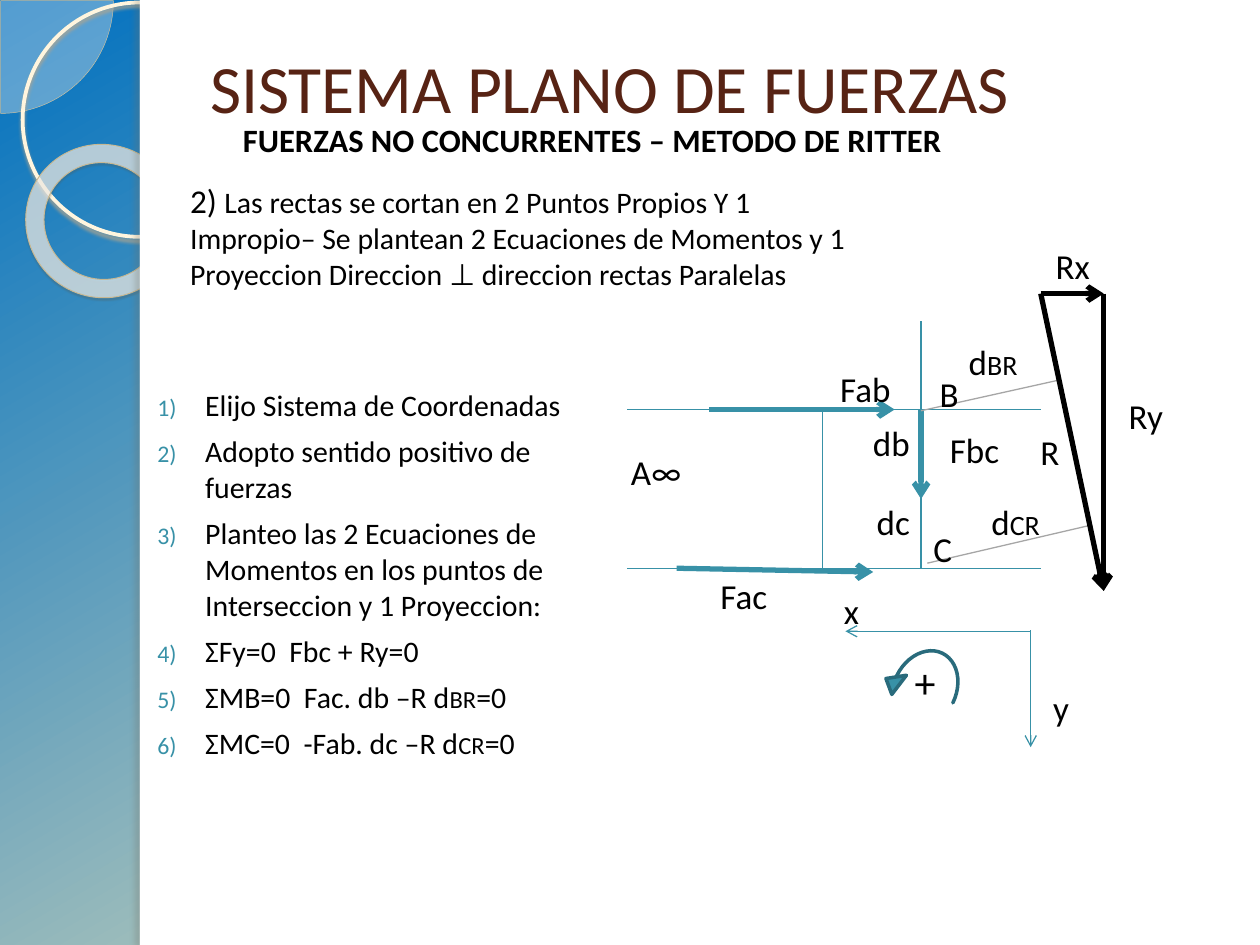
from typing import NamedTuple, Optional

from lxml import etree
from pptx import Presentation
from pptx.dml.color import RGBColor
from pptx.enum.shapes import MSO_CONNECTOR, MSO_SHAPE
from pptx.enum.text import MSO_ANCHOR
from pptx.oxml.ns import qn
from pptx.util import Inches, Pt

STRAIGHT = MSO_CONNECTOR.STRAIGHT
RECT, OVAL, DONUT = MSO_SHAPE.RECTANGLE, MSO_SHAPE.OVAL, MSO_SHAPE.DONUT
PIE, TURN = MSO_SHAPE.PIE, MSO_SHAPE.CIRCULAR_ARROW
TOP, MIDDLE = MSO_ANCHOR.TOP, MSO_ANCHOR.MIDDLE
FONT = "Calibri"
COLORS = {
    "black": "000000", "white": "FFFFFF", "brown": "572314", "teal": "3891A7",
    "deep": "296B7C", "gray": "A6A6A6", "blue": "0070C0", "mist": "9CBCBB",
    "cream": "FEFAF4", "sand": "D3C39F", "ring": "FFF5DE", "tan": "C7B893",
    "shade": "B0A68F", "dusk": "5A5444", "edge": "736F63",
}


class Run(NamedTuple):
    text: str
    size: float
    color: str = "black"
    bold: bool = False


class Shade(NamedTuple):
    color: str
    alpha: int
    blur: float
    dist: float
    angle: int


class Form(NamedTuple):
    kind: int
    box: tuple
    fill: Optional[str] = None
    alpha: int = 100
    line: Optional[str] = None
    width: float = 0
    turn: float = 0
    adjust: tuple = ()
    shade: Optional[Shade] = None
    flip: bool = False


class Line(NamedTuple):
    start: tuple
    end: tuple
    color: str = "teal"
    width: float = 0.75
    arrow: bool = False


class Label(NamedTuple):
    x: float
    y: float
    runs: list
    width: float = 0.74
    height: float = 0.44


def rgb(name: str) -> RGBColor:
    return RGBColor.from_string(COLORS[name])


def add_node(parent, tag: str, **attrs):
    return etree.SubElement(parent, qn(tag), {key: str(val) for key, val in attrs.items()})


def add_form(slide, form: Form):
    shape = slide.shapes.add_shape(form.kind, *map(Inches, form.box))
    shape.shadow.inherit = False
    shape.rotation = form.turn
    for i, value in enumerate(form.adjust):
        shape.adjustments[i] = value
    props = shape._element.spPr
    if form.fill:
        shape.fill.solid()
        shape.fill.fore_color.rgb = rgb(form.fill)
        if form.alpha < 100:
            add_node(props.find(".//" + qn("a:srgbClr")), "a:alpha", val=form.alpha * 1000)
    else:
        shape.fill.background()
    if form.line:
        shape.line.color.rgb = rgb(form.line)
        shape.line.width = Pt(form.width)
    else:
        shape.line.fill.background()
    if form.flip:
        props.find(qn("a:xfrm")).set("flipH", "1")
    if form.shade:
        cast = form.shade
        node = add_node(props.find(qn("a:effectLst")), "a:outerShdw", blurRad=Pt(cast.blur),
                        dist=Pt(cast.dist), dir=cast.angle * 60000, rotWithShape=0)
        tone = add_node(node, "a:srgbClr", val=COLORS[cast.color])
        add_node(tone, "a:alpha", val=cast.alpha * 1000)
    return shape


def add_line(slide, line: Line) -> None:
    link = slide.shapes.add_connector(STRAIGHT, *map(Inches, line.start + line.end))
    link.line.color.rgb = rgb(line.color)
    link.line.width = Pt(line.width)
    props = link._element.spPr
    if line.arrow:
        add_node(props.find(qn("a:ln")), "a:tailEnd", type="arrow")
    add_node(props, "a:effectLst")


def add_text(slide, box: tuple, paras: list, indent: float = 0, hang: float = 0,
             before: float = 0, spacing: float = 1, anchor=TOP, numbered: bool = False) -> None:
    frame = slide.shapes.add_textbox(*map(Inches, box)).text_frame
    frame.word_wrap = True
    frame.vertical_anchor = anchor
    for i, runs in enumerate(paras):
        para = frame.add_paragraph() if i else frame.paragraphs[0]
        para.space_before = Pt(before)
        para.line_spacing = spacing
        props = para._p.get_or_add_pPr()
        props.set("marL", str(Inches(indent)))
        props.set("indent", str(Inches(hang)))
        if numbered:
            add_node(add_node(props, "a:buClr"), "a:srgbClr", val=COLORS["teal"])
            add_node(props, "a:buSzPct", val=80000)
            add_node(props, "a:buAutoNum", type="arabicParenR")
        for item in runs:
            run = para.add_run()
            run.text = item.text
            run.font.name = FONT
            run.font.size = Pt(item.size)
            run.font.bold = item.bold
            run.font.color.rgb = rgb(item.color)


def add_side(slide) -> None:
    fill = add_form(slide, Form(RECT, (0, 0, 1.2, 7.5), "blue")).fill
    fill.gradient()
    fill.gradient_angle = 300
    for stop, name in zip(fill.gradient_stops, ("blue", "mist")):
        stop.color.rgb = rgb(name)
    for form in (
        Form(PIE, (-0.89, -0.89, 1.79, 1.79), "cream", 33, "sand", 0.25, adjust=(0, 54.02)),
        Form(OVAL, (0.18, 0.02, 1.86, 1.86), line="ring", width=2.15,
             shade=Shade("shade", 85, 2, 2, 90)),
        Form(DONUT, (0.2, 1.15, 1.23, 1.21), "cream", 65, "tan", 0.58, 38.6, (0.12,),
             Shade("dusk", 35, 1, 1.2, 75)),
        Form(RECT, (1.11, 0, 8.89, 7.5), "white"),
        Form(RECT, (1.11, 0, 0.08, 7.5), "white", shade=Shade("edge", 25, 3, 3, 180)),
    ):
        add_form(slide, form)


def add_words(slide) -> None:
    add_text(slide, (1.57, 0.3, 8.2, 0.77),
             [[Run("SISTEMA PLANO DE FUERZAS", 38.7, "brown")]], anchor=MIDDLE)
    add_text(slide, (1.39, 0.96, 8.2, 0.53),
             [[Run("FUERZAS NO CONCURRENTES – METODO DE RITTER", 18.6, bold=True)]],
             indent=0.44, before=5.5, spacing=0.8)
    add_text(slide, (1.27, 1.38, 5.83, 1.48), [[
        Run("2) ", 19),
        Run("Las rectas se cortan en 2 Puntos Propios Y 1 Impropio– Se plantean 2 Ecuaciones "
            "de Momentos y 1 Proyeccion Direccion ⊥ direccion rectas Paralelas", 17),
    ]], indent=0.14, before=6)
    steps = [[Run(text, 17)] for text in (
        "Elijo Sistema de Coordenadas",
        "Adopto sentido positivo de fuerzas",
        "Planteo las 2 Ecuaciones de Momentos en los puntos de Interseccion y 1 Proyeccion:",
        "ΣFy=0  Fbc + Ry=0",
    )]
    steps += [[Run(text, 17), Run(sub, 14), Run("=0", 17)] for text, sub in (
        ("ΣMB=0  Fac. db –R d", "BR"), ("ΣMC=0  -Fab. dc –R d", "CR"))]
    add_text(slide, (1.01, 3.02, 3.89, 4.04), steps,
             indent=0.52, hang=-0.38, before=6, numbered=True)


def add_sketch(slide) -> None:
    add_form(slide, Form(TURN, (7.01, 5.07, 0.66, 0.8), "teal", line="deep", width=2, turn=26.1,
                         adjust=(0, 19.33, 1.76, 108, 0.125), flip=True))
    left, right, high, low, mid = 4.98, 8.26, 3.25, 4.51, 7.31
    start, corner, tip = (right, 2.33), (8.76, 2.33), (8.76, 4.69)
    for line in (
        Line((left, low), (right, low)),
        Line((left, high), (right, high)),
        Line((mid, low), (mid, 2.55)),
        Line((6.53, 4.53), (6.53, high)),
        Line((5.63, high), (7.1, high), width=3, arrow=True),
        Line((5.37, low), (6.93, 4.54), width=3, arrow=True),
        Line((mid, high), (mid, 3.96), width=3, arrow=True),
        Line((mid, 3.26), (8.39, 3.02), "gray"),
        Line((7.36, 4.47), (8.65, 4.17), "gray"),
        Line((8.18, 5.01), (6.71, 5.01), arrow=True),
        Line((8.18, 5), (8.18, 5.93), arrow=True),
        Line(start, tip, "black", 3, True),
        Line(corner, tip, "black", 3, True),
        Line(start, corner, "black", 3, True),
    ):
        add_line(slide, line)
    labels = [Label(x, y, [Run(text, 20)]) for text, x, y in (
        ("B", 7.36, 2.91), ("C", 7.31, 4.14), ("Fab", 6.57, 2.87), ("Fac", 5.62, 4.51),
        ("Fbc", 7.44, 3.35), ("R", 8.16, 3.37), ("x", 6.6, 4.63), ("y", 8.26, 5.4),
        ("db", 6.83, 3.3), ("dc", 6.86, 3.92), ("Rx", 8.28, 1.89), ("Ry", 8.86, 3.08))]
    labels += [Label(x, y, [Run("d", 20), Run(sub, 16)]) for sub, x, y in (
        ("BR", 7.59, 2.65), ("CR", 7.77, 3.92))]
    labels += [Label(4.91, 3.53, [Run("A∞", 20)], 0.83),
               Label(7.16, 5.16, [Run("+", 24)], 0.51, 0.5)]
    for label in labels:
        add_text(slide, (label.x, label.y, label.width, label.height), [label.runs])


def main() -> None:
    """Build the slide on plane force systems and save it."""
    deck = Presentation()
    deck.slide_width, deck.slide_height = Inches(10), Inches(7.5)
    slide = deck.slides.add_slide(deck.slide_layouts[6])
    add_side(slide)
    add_words(slide)
    add_sketch(slide)
    deck.save("out.pptx")


if __name__ == "__main__":
    main()
